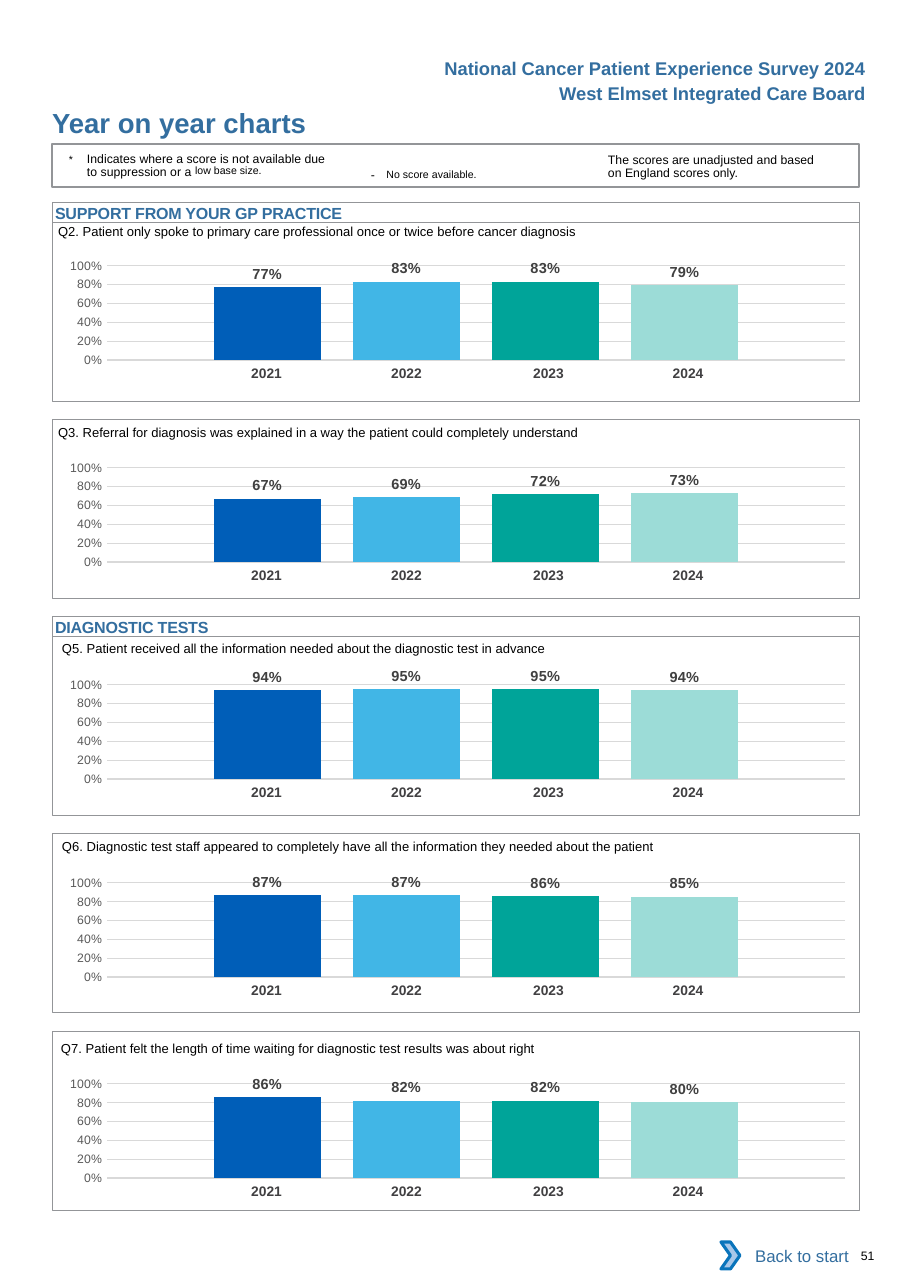
import pptx
import pptx.chart.data
import pptx.dml.color
import pptx.enum.chart
import pptx.enum.shapes
import pptx.enum.text
import pptx.oxml
import pptx.oxml.ns
import pptx.util

RGB = pptx.dml.color.RGBColor.from_string
Pt = pptx.util.Pt
Align = pptx.enum.text.PP_ALIGN
Anchor = pptx.enum.text.MSO_ANCHOR
Shape = pptx.enum.shapes.MSO_SHAPE
qn = pptx.oxml.ns.qn


class Theme:
    font, chart_font = "Arial", "Calibri"
    heading, text, border, white = "336E9F", "000000", "939598", "FFFFFF"
    year, value, scale, grid = "414042", "404040", "595959", "D9D9D9"
    arrow_fill, arrow_line = "A8C7E9", "0A74BB"
    bars = ["005EB8", "41B6E6", "00A499", "9CDCD7"]
    title_size, header_size, link_size, section_size = 18, 12, 11, 10.5
    value_size, year_size, question_size, small_size, raised_size = 9.5, 9, 8.5, 8, 12


def px(*lengths):
    """Whole pixels to EMU, at 110.2 pixels to the inch."""
    return [pptx.util.Emu(length * 8298) for length in lengths]


def write(frame, runs, size, color=Theme.text, bold=False, align=Align.LEFT,
          anchor=Anchor.TOP, margins=(0, 0, 0, 0), before=0):
    """Fill a text frame with (text, size, baseline, spacing) runs or one plain string."""
    frame.word_wrap = True
    frame.vertical_anchor = anchor
    frame.margin_left, frame.margin_top, frame.margin_right, frame.margin_bottom = px(*margins)
    paragraph = frame.paragraphs[0]
    paragraph.alignment, paragraph.space_before = align, Pt(before)
    if isinstance(runs, str):
        runs = [(runs, size, 0, 0)]
    for text, run_size, baseline, spacing in runs:
        run = paragraph.add_run()
        run.text = text
        run.font.name, run.font.size, run.font.bold = Theme.font, Pt(run_size), bold
        run.font.color.rgb = RGB(color)
        properties = run.font._element
        if baseline:
            properties.set("baseline", str(baseline))
        if spacing:
            properties.set("spc", str(spacing))
    return paragraph


prs = pptx.Presentation()
prs.slide_width, prs.slide_height = px(910, 1288)
slide = prs.slides.add_slide(prs.slide_layouts[5])
shapes = slide.shapes

# Title and page header
title = shapes.title
title.left, title.top, title.width, title.height = px(52, 106, 496, 33)
write(title.text_frame, "Year on year charts", Theme.title_size, Theme.heading, True, before=4.1)
for top, header in [(51, "National Cancer Patient Experience Survey 2024"),
                    (76, "West Elmset Integrated Care Board")]:
    header_box = shapes.add_textbox(*px(412, top, 465, 33))
    write(header_box.text_frame, header, Theme.header_size, Theme.heading, True,
          Align.RIGHT, margins=(11, 6, 11, 6))

# Notes on the scores
small, raised = Theme.small_size, Theme.raised_size
suppression = shapes.add_textbox(*px(69, 152, 264, 30))
suppression_note = write(suppression.text_frame, [
    ("*\t", raised, 3000, 0),
    ("Indicates where a score is not available due to suppression or a ", small, 0, 0),
    ("low base size.", raised, 7000, 0)], small, margins=(0, 3, 0, 0), before=2.5)
suppression_note.line_spacing = Pt(8.1)
indent = suppression_note._p.get_or_add_pPr()
indent.set("marL", str(px(18)[0]))
indent.set("indent", str(px(-18)[0]))

no_score = shapes.add_textbox(*px(360, 155, 202, 26))
write(no_score.text_frame, [("- ", small, 0, 260), ("No score available.", raised, 3000, 0)],
      small, margins=(11, 6, 11, 6), before=2.1)

unadjusted = shapes.add_textbox(*px(608, 152, 216, 30))
unadjusted_note = write(unadjusted.text_frame,
                        "The scores are unadjusted and based on England scores only.",
                        small, margins=(0, 3, 0, 0), before=2.5)
unadjusted_note.line_spacing = Pt(8.1)

# One panel per question: frame top, chart top, question left and middle, question, scores
years = ["2021", "2022", "2023", "2024"]
panels = [
    (222, 245, 58, 231, "Q2. Patient only spoke to primary care professional once or twice "
     "before cancer diagnosis", [0.77, 0.83, 0.83, 0.79]),
    (419, 447, 58, 432, "Q3. Referral for diagnosis was explained in a way the patient could "
     "completely understand", [0.67, 0.69, 0.72, 0.73]),
    (636, 664, 62, 648, "Q5. Patient received all the information needed about the diagnostic "
     "test in advance", [0.94, 0.95, 0.95, 0.94]),
    (833, 862, 62, 846, "Q6. Diagnostic test staff appeared to completely have all the "
     "information they needed about the patient", [0.87, 0.87, 0.86, 0.85]),
    (1031, 1063, 61, 1048, "Q7. Patient felt the length of time waiting for diagnostic test "
     "results was about right", [0.86, 0.82, 0.82, 0.80]),
]
for frame_top, chart_top, question_left, question_middle, question, scores in panels:
    # Bar chart
    data = pptx.chart.data.CategoryChartData(number_format="0%")
    data.categories = ["1"]
    for number, score in enumerate(scores, 1):
        data.add_series(f"Series {number}", [score])
    chart = shapes.add_chart(pptx.enum.chart.XL_CHART_TYPE.COLUMN_CLUSTERED,
                             *px(43, chart_top, 807, 142), data).chart
    chart.has_legend = chart.has_title = False
    chart.font.name, chart.font.size = Theme.chart_font, Pt(10)
    chart.font.color.rgb = RGB(Theme.text)
    chart.category_axis.visible = False

    axis = chart.value_axis
    axis.minimum_scale, axis.maximum_scale, axis.major_unit = 0, 1, 0.2
    axis.major_tick_mark = pptx.enum.chart.XL_TICK_MARK.NONE
    axis.format.line.fill.background()
    axis.major_gridlines.format.line.color.rgb = RGB(Theme.grid)
    axis.major_gridlines.format.line.width = Pt(0.75)
    axis.tick_labels.number_format = "0%"
    axis.tick_labels.number_format_is_linked = False
    axis.tick_labels.font.name, axis.tick_labels.font.size = Theme.font, Pt(small)
    axis.tick_labels.font.color.rgb = RGB(Theme.scale)

    plot = chart.plots[0]
    plot.gap_width, plot.overlap, plot.vary_by_categories = 200, -30, False
    for series, color in zip(plot.series, Theme.bars):
        series.format.fill.solid()
        series.format.fill.fore_color.rgb = RGB(color)
        labels = series.data_labels
        labels.show_value = True
        labels.position = pptx.enum.chart.XL_LABEL_POSITION.OUTSIDE_END
        labels.number_format, labels.number_format_is_linked = "0%", False
        labels.font.name, labels.font.size = Theme.font, Pt(Theme.value_size)
        labels.font.bold = True
        labels.font.color.rgb = RGB(Theme.value)

    # Fixed plot area, so that the bars line up with the years
    plot_area = chart._chartSpace.chart.plotArea
    for old_layout in plot_area.findall(qn("c:layout")):
        plot_area.remove(old_layout)
    plot_area.insert(0, pptx.oxml.parse_xml(
        '<c:layout xmlns:c="http://schemas.openxmlformats.org/drawingml/2006/chart">'
        '<c:manualLayout><c:layoutTarget val="inner"/><c:xMode val="edge"/>'
        '<c:yMode val="edge"/><c:x val="0.079"/><c:y val="0.145"/><c:w val="0.915"/>'
        '<c:h val="0.666"/></c:manualLayout></c:layout>'))

    # Years below the bars
    years_frame = shapes.add_table(1, 4, *px(191, chart_top + 116, 568, 30))
    years_table = years_frame.table
    years_table.first_row = years_table.horz_banding = False
    for style in years_frame.element.iter(qn("a:tableStyleId")):
        style.text = "{2D5ABB26-0587-4C30-8999-92F81FD0307C}"
    for column, (year, width, right) in enumerate(zip(years, [140, 140, 148, 140],
                                                       [0, 0, 4, 13])):
        years_table.columns[column].width = px(width)[0]
        cell = years_table.cell(0, column)
        cell.fill.background()
        cell.margin_left, cell.margin_top, cell.margin_right, cell.margin_bottom = px(
            11, 5, right, 5)
        paragraph = cell.text_frame.paragraphs[0]
        paragraph.text, paragraph.alignment = year, Align.CENTER
        font = paragraph.runs[0].font
        font.name, font.size, font.bold = Theme.font, Pt(Theme.year_size), True
        font.color.rgb = RGB(Theme.year)

    # Question
    question_box = shapes.add_textbox(*px(question_left, question_middle - 10, 780, 20))
    write(question_box.text_frame, question, Theme.question_size, anchor=Anchor.MIDDLE)

# Outlines: notes box, section headings and question frames
outlines = [(144, 43, 0.75, ""), (202, 20, 0.5, "SUPPORT FROM YOUR GP PRACTICE"),
            (616, 20, 0.5, "DIAGNOSTIC TESTS")]
outlines += [(panel[0], 179, 0.5, "") for panel in panels]
for top, height, weight, section in outlines:
    outline = shapes.add_shape(Shape.RECTANGLE, *px(52, top, 807, height))
    outline.shadow.inherit = False
    outline.fill.background()
    outline.line.color.rgb = RGB(Theme.border)
    outline.line.width = Pt(weight)
    if section:
        write(outline.text_frame, [(section, Theme.section_size, 0, -12)], Theme.section_size,
              Theme.heading, True, margins=(3, 1, 0, 0), before=0.5)

# Back link and page number
back = shapes.add_shape(Shape.RECTANGLE, *px(730, 1233, 130, 46))
back.shadow.inherit = False
back.fill.solid()
back.fill.fore_color.rgb = RGB(Theme.white)
back.line.fill.background()
write(back.text_frame, "Back to start", Theme.link_size, Theme.heading, align=Align.RIGHT,
      anchor=Anchor.MIDDLE, margins=(0, 6, 11, 6))
arrow = shapes.add_shape(Shape.CHEVRON, *px(721, 1242, 19, 27))
arrow.shadow.inherit = False
arrow.fill.solid()
arrow.fill.fore_color.rgb = RGB(Theme.arrow_fill)
arrow.line.color.rgb = RGB(Theme.arrow_line)
arrow.line.width = Pt(2)
page_number = shapes.add_textbox(*px(861, 1248, 46, 14))
write(page_number.text_frame, "51", small)

prs.save("out.pptx")
